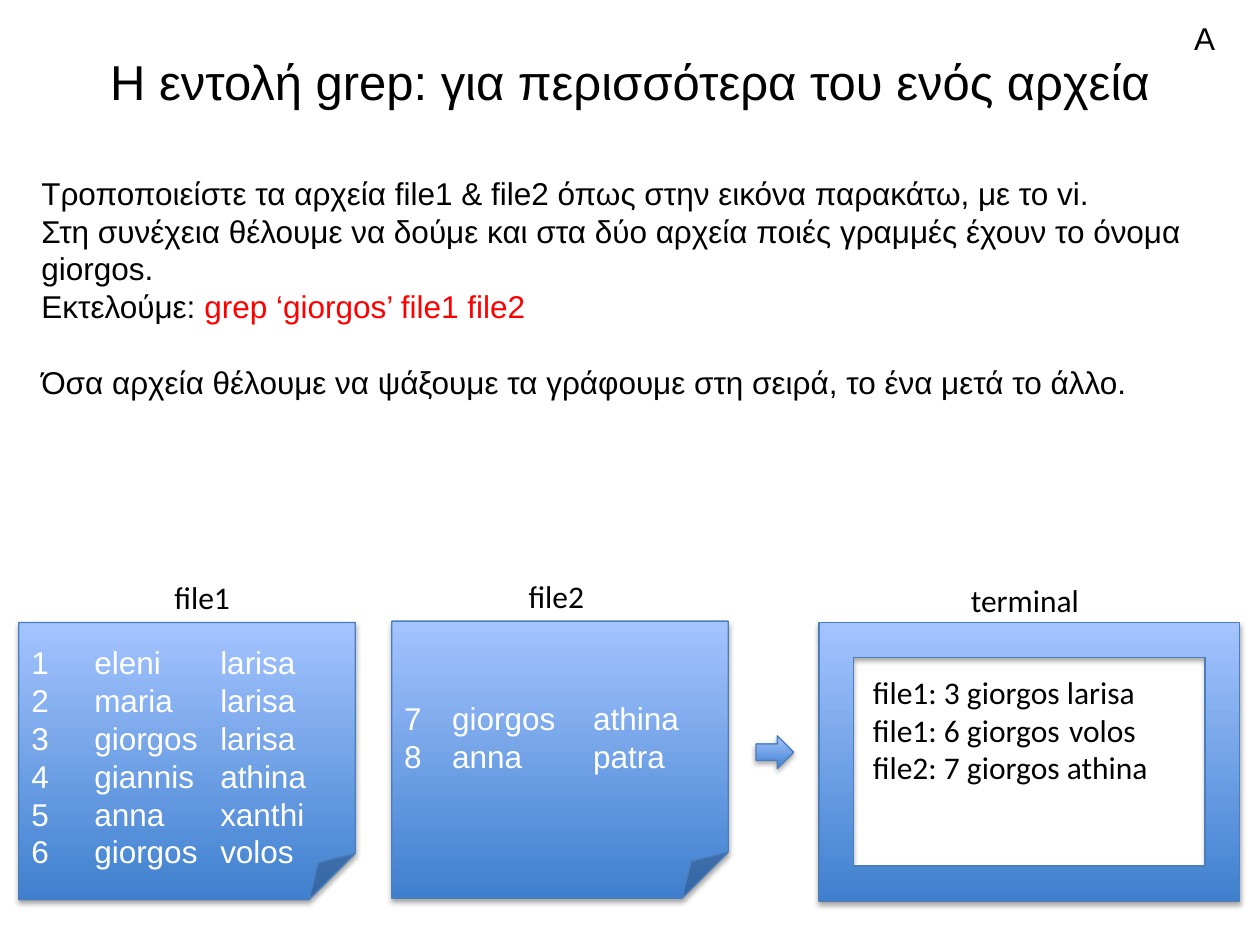
from lxml import etree
from pptx import Presentation
from pptx.dml.color import RGBColor
from pptx.enum.shapes import MSO_SHAPE
from pptx.enum.text import MSO_ANCHOR, PP_ALIGN
from pptx.oxml.ns import qn
from pptx.util import Inches, Pt

FOLDED, FRAME, ARROW = MSO_SHAPE.FOLDED_CORNER, MSO_SHAPE.FRAME, MSO_SHAPE.RIGHT_ARROW
LEFT, CENTER = PP_ALIGN.LEFT, PP_ALIGN.CENTER
TOP, MIDDLE = MSO_ANCHOR.TOP, MSO_ANCHOR.MIDDLE

BLACK = RGBColor(0x00, 0x00, 0x00)
WHITE = RGBColor(0xFF, 0xFF, 0xFF)
RED = RGBColor(0xFF, 0x00, 0x00)
DEEP_BLUE = RGBColor(0x3F, 0x80, 0xCE)
PALE_BLUE = RGBColor(0xA4, 0xC4, 0xFF)
EDGE_BLUE = RGBColor(0x4B, 0x7E, 0xBC)

COLS, ROWS = 100, 75
SLIDE_W, SLIDE_H = Inches(10), Inches(7.5)
COL, ROW = SLIDE_W / COLS, SLIDE_H / ROWS
LABEL_ROWS = 4


def place(box):
    x, y, w, h = box
    return int(x * COL), int(y * ROW), int(w * COL), int(h * ROW)


def add_run(p, text, font="Arial", size=18, color=BLACK):
    r = p.add_run()
    r.text = text
    r.font.name = font
    r.font.size = Pt(size)
    r.font.color.rgb = color


def add_lines(tf, lines, align=LEFT, **style):
    for i, line in enumerate(lines):
        p = tf.paragraphs[0] if i == 0 else tf.add_paragraph()
        p.alignment = align
        add_run(p, line, **style)


def add_text(slide, box, lines, align=LEFT, anchor=TOP, wrap=True, **style):
    tf = slide.shapes.add_textbox(*place(box)).text_frame
    tf.word_wrap = wrap
    tf.vertical_anchor = anchor
    add_lines(tf, lines, align, **style)
    return tf


def add_blue_shape(slide, kind, box):
    sp = slide.shapes.add_shape(kind, *place(box))
    sp.fill.gradient()
    sp.fill.gradient_angle = 90
    for stop, color in zip(sp.fill.gradient_stops, (DEEP_BLUE, PALE_BLUE)):
        stop.color.rgb = color
    sp.line.color.rgb = EDGE_BLUE
    sp.line.width = Pt(0.75)
    sp.shadow.inherit = False
    effects = sp._element.spPr.find(qn("a:effectLst"))
    shadow = etree.SubElement(effects, qn("a:outerShdw"), blurRad=str(Pt(3.1)),
                              dist=str(Pt(1.8)), dir="5400000", rotWithShape="0")
    color = etree.SubElement(shadow, qn("a:srgbClr"), val=str(BLACK))
    etree.SubElement(color, qn("a:alpha"), val="35000")
    return sp


def number_from(p, start):
    pPr = p._p.get_or_add_pPr()
    pPr.set("marL", str(Inches(0.38)))
    pPr.set("indent", str(-Inches(0.38)))
    etree.SubElement(pPr, qn("a:buFont"), typeface="+mj-lt")
    etree.SubElement(pPr, qn("a:buAutoNum"), type="arabicPlain", startAt=str(start))


def add_label(slide, box, text, width, shift):
    x, y, w, _ = box
    label = (x + (w - width) / 2 + shift, y, width, LABEL_ROWS)
    add_text(slide, label, [text], CENTER, wrap=False, font="Calibri")


def add_file(slide, box, name, lines, shift, start=None, top=0.05):
    x, y, w, h = box
    add_label(slide, box, name, 6.5, shift)
    page = add_blue_shape(slide, FOLDED, (x, y + LABEL_ROWS, w, h - LABEL_ROWS))
    tf = page.text_frame
    tf.vertical_anchor = MIDDLE
    tf.margin_top = Inches(top)
    add_lines(tf, lines, color=WHITE)
    if start is not None:
        for p in tf.paragraphs:
            number_from(p, start)


def add_terminal(slide, box, lines):
    x, y, w, h = box
    add_label(slide, box, "terminal", 10.7, -0.35)
    add_blue_shape(slide, FRAME, (x, y + 3.8, w, h - 3.8))
    add_text(slide, (x + 3.3, y + 7.3, w - 6.9, 10.1), lines, font="Calibri")


def add_heading(slide, box):
    x, y, w, h = box
    add_text(slide, (x + 5, y + 3, w - 10, h - 3),
             ["Η εντολή grep: για περισσότερα του ενός αρχεία"],
             CENTER, MIDDLE, size=28)
    add_text(slide, (x + w - 6.2, y + 1, 5, 4), ["Α"])


def add_body(slide, box):
    tf = add_text(slide, box, [
        "Τροποποιείστε τα αρχεία file1 & file2 όπως στην εικόνα παρακάτω, με το vi.",
        "Στη συνέχεια θέλουμε να δούμε και στα δύο αρχεία ποιές γραμμές έχουν το όνομα giorgos.",
        "Εκτελούμε: ",
        "Όσα αρχεία θέλουμε να ψάξουμε τα γράφουμε στη σειρά, το ένα μετά το άλλο.",
    ])
    command, closing = tf.paragraphs[2:]
    add_run(command, "grep ‘giorgos’ file1 file2", color=RED)
    closing.space_before = Pt(21.6)


def main():
    prs = Presentation()
    prs.slide_width, prs.slide_height = SLIDE_W, SLIDE_H
    slide = prs.slides.add_slide(prs.slide_layouts[6])
    add_heading(slide, (0, 0, COLS, 9.8))
    add_body(slide, (2.3, 13.3, 96.1, 19.2))
    add_file(slide, (1.5, 45.4, 26.7, 26), "file1", [
        "1\teleni\tlarisa",
        "2\tmaria\tlarisa",
        "3\tgiorgos\tlarisa",
        "4\tgiannis\tathina",
        "5\tanna\txanthi",
        "6 \tgiorgos\tvolos",
    ], shift=1.2, top=0.35)
    add_file(slide, (31.1, 45.3, 26.7, 26), "file2",
             ["giorgos\tathina", "anna\t\tpatra"], shift=-0.3, start=7)
    add_blue_shape(slide, ARROW, (60, 58.4, 3, 2.6))
    add_terminal(slide, (65, 45.6, 33.4, 25.9), [
        "file1: 3 giorgos larisa",
        "file1: 6 giorgos\t volos",
        "file2: 7 giorgos athina",
    ])
    prs.save("out.pptx")


if __name__ == "__main__":
    main()
